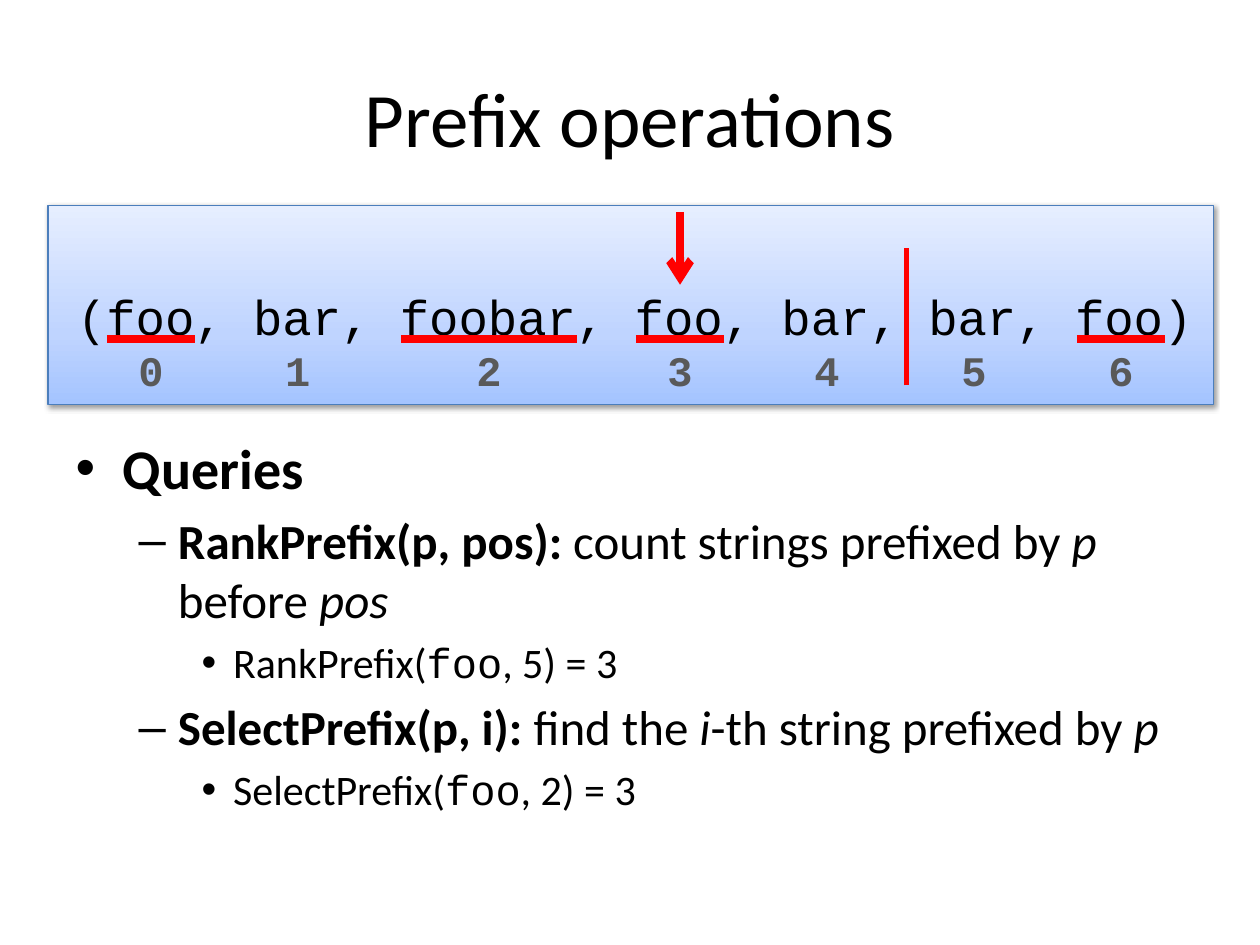
"""Build the slide on prefix operations over a sequence of strings."""
import copy
from dataclasses import dataclass

import lxml.etree
import pptx
import pptx.dml.color
import pptx.enum.shapes
import pptx.enum.text
import pptx.oxml.ns
import pptx.util

Cm = pptx.util.Cm
Pt = pptx.util.Pt
qn = pptx.oxml.ns.qn


@dataclass(frozen=True)
class Theme:
    sans: str = "Calibri"
    mono: str = "Courier New"
    ink: str = "000000"
    index: str = "595959"
    mark: str = "FF0000"
    border: str = "4B7EBC"
    gradient: tuple = ((0, "A4C4FF"), (0.35, "BFD4FF"), (1, "E6EEFF"))
    title_size: int = 44
    level_sizes: tuple = (32, 28, 24)
    word_size: int = 28
    index_size: int = 24


THEME = Theme()
WORDS = ["foo", "bar", "foobar", "foo", "bar", "bar", "foo"]
PREFIX = "foo"
CHAR_WIDTH = THEME.word_size * 0.6 * 2.54 / 72
SEQUENCE_LEFT = 1.56
UNDERLINE_TOP = 6.83
INDEX_LEFT = 1.98

BOLD = {"bold": True}
ITALIC = {"italic": True}
MONO = {"font": THEME.mono}
QUERIES = [
    (0, [("Queries", BOLD)]),
    (1, [("RankPrefix(p, pos):", BOLD), (" count strings prefixed by ", {}), ("p", ITALIC),
         (" before ", {}), ("pos", ITALIC)]),
    (2, [("RankPrefix(", {}), (PREFIX, MONO), (", 5) = 3", {})]),
    (1, [("SelectPrefix(p, i):", BOLD), (" find the ", {}), ("i", ITALIC),
         ("-th string prefixed by ", {}), ("p", ITALIC)]),
    (2, [("SelectPrefix(", {}), (PREFIX, MONO), (", 2) = 3", {})]),
]


def rgb(code):
    return pptx.dml.color.RGBColor.from_string(code)


def add_text(paragraph, text, *, size, font=THEME.sans, color=THEME.ink, bold=False, italic=False):
    run = paragraph.add_run()
    run.text = text
    run.font.size = Pt(size)
    run.font.name = font
    run.font.color.rgb = rgb(color)
    run.font.bold = bold
    run.font.italic = italic


def place(shape, left, top, width, height):
    shape.left, shape.top = Cm(left), Cm(top)
    shape.width, shape.height = Cm(width), Cm(height)


def word_spans():
    """Return the start and end of each word in centimetres, in monospaced steps."""
    spans = []
    column = 1
    for word in WORDS:
        start = SEQUENCE_LEFT + column * CHAR_WIDTH
        spans.append((start, start + len(word) * CHAR_WIDTH))
        column += len(word) + 2
    return spans


def fill_gradient(shape):
    shape.fill.gradient()
    shape.fill.gradient_angle = 90
    stop_list = shape.element.spPr.find(qn("a:gradFill")).find(qn("a:gsLst"))
    stop_list.insert(1, copy.deepcopy(stop_list[0]))
    for stop, (position, code) in zip(shape.fill.gradient_stops, THEME.gradient):
        stop.position = position
        stop.color.rgb = rgb(code)


def add_soft_shadow(shape):
    shape.shadow.inherit = False
    effects = shape.element.spPr.find(qn("a:effectLst"))
    shadow = lxml.etree.SubElement(effects, qn("a:outerShdw"), blurRad="40000",
                                   dist="20000", dir="5400000", rotWithShape="0")
    black = lxml.etree.SubElement(shadow, qn("a:srgbClr"), val="000000")
    lxml.etree.SubElement(black, qn("a:alpha"), val="38000")


def add_sequence(slide):
    panel = slide.shapes.add_shape(pptx.enum.shapes.MSO_SHAPE.RECTANGLE,
                                   Cm(0.97), Cm(4.14), Cm(23.5), Cm(4.01))
    fill_gradient(panel)
    panel.line.color.rgb = rgb(THEME.border)
    panel.line.width = Pt(0.75)
    add_soft_shadow(panel)
    frame = panel.text_frame
    frame.word_wrap = True
    frame.vertical_anchor = pptx.enum.text.MSO_ANCHOR.TOP
    frame.margin_left, frame.margin_top = Cm(0.41), Cm(1.64)
    paragraph = frame.paragraphs[0]
    paragraph.alignment = pptx.enum.text.PP_ALIGN.CENTER
    add_text(paragraph, f"({', '.join(WORDS)})", size=THEME.word_size, font=THEME.mono)


def add_indexes(slide, spans):
    """Number the words with tab stops centred below them."""
    box = slide.shapes.add_textbox(Cm(INDEX_LEFT), Cm(6.83), Cm(22.15), Cm(1.27))
    frame = box.text_frame
    frame.word_wrap = True
    frame.margin_left = 0
    paragraph = frame.paragraphs[0]
    add_text(paragraph, "".join(f"\t{number}" for number in range(len(WORDS))),
             size=THEME.index_size, font=THEME.mono, color=THEME.index, bold=True)
    tabs = lxml.etree.SubElement(paragraph._p.get_or_add_pPr(), qn("a:tabLst"))
    for start, end in spans:
        center = Cm((start + end) / 2 - INDEX_LEFT)
        lxml.etree.SubElement(tabs, qn("a:tab"), pos=str(int(center)), algn="ctr")


def add_mark(slide, start, end, *, width=4.5, arrow=False):
    mark = slide.shapes.add_connector(pptx.enum.shapes.MSO_CONNECTOR.STRAIGHT,
                                      *map(Cm, start), *map(Cm, end))
    mark.line.color.rgb = rgb(THEME.mark)
    mark.line.width = Pt(width)
    properties = mark._element.spPr
    if arrow:
        lxml.etree.SubElement(properties.find(qn("a:ln")), qn("a:tailEnd"), type="arrow")
    lxml.etree.SubElement(properties, qn("a:effectLst"))


def add_marks(slide, spans):
    limit = spans[5][0] - 0.8 * CHAR_WIDTH
    add_mark(slide, (limit, 7.77), (limit, 5), width=3)
    selected = sum(spans[3]) / 2
    add_mark(slide, (selected, 4.27), (selected, 5.74), arrow=True)
    for word, (start, end) in zip(WORDS, spans):
        if word.startswith(PREFIX):
            add_mark(slide, (start, UNDERLINE_TOP), (end, UNDERLINE_TOP))


def fill_title(title):
    place(title, 1.27, 0.76, 22.86, 3.18)
    add_text(title.text_frame.paragraphs[0], "Prefix operations", size=THEME.title_size)


def fill_queries(body):
    place(body, 1.27, 8.61, 22.86, 9.68)
    frame = body.text_frame
    for number, (level, parts) in enumerate(QUERIES):
        paragraph = frame.add_paragraph() if number else frame.paragraphs[0]
        paragraph.level = level
        for text, style in parts:
            add_text(paragraph, text, size=THEME.level_sizes[level], **style)


def main():
    deck = pptx.Presentation()
    deck.slide_width, deck.slide_height = Cm(25.4), Cm(19.05)
    slide = deck.slides.add_slide(deck.slide_layouts[1])
    spans = word_spans()
    fill_title(slide.shapes.title)
    fill_queries(slide.placeholders[1])
    add_sequence(slide)
    add_indexes(slide, spans)
    add_marks(slide, spans)
    deck.save("out.pptx")


if __name__ == "__main__":
    main()
